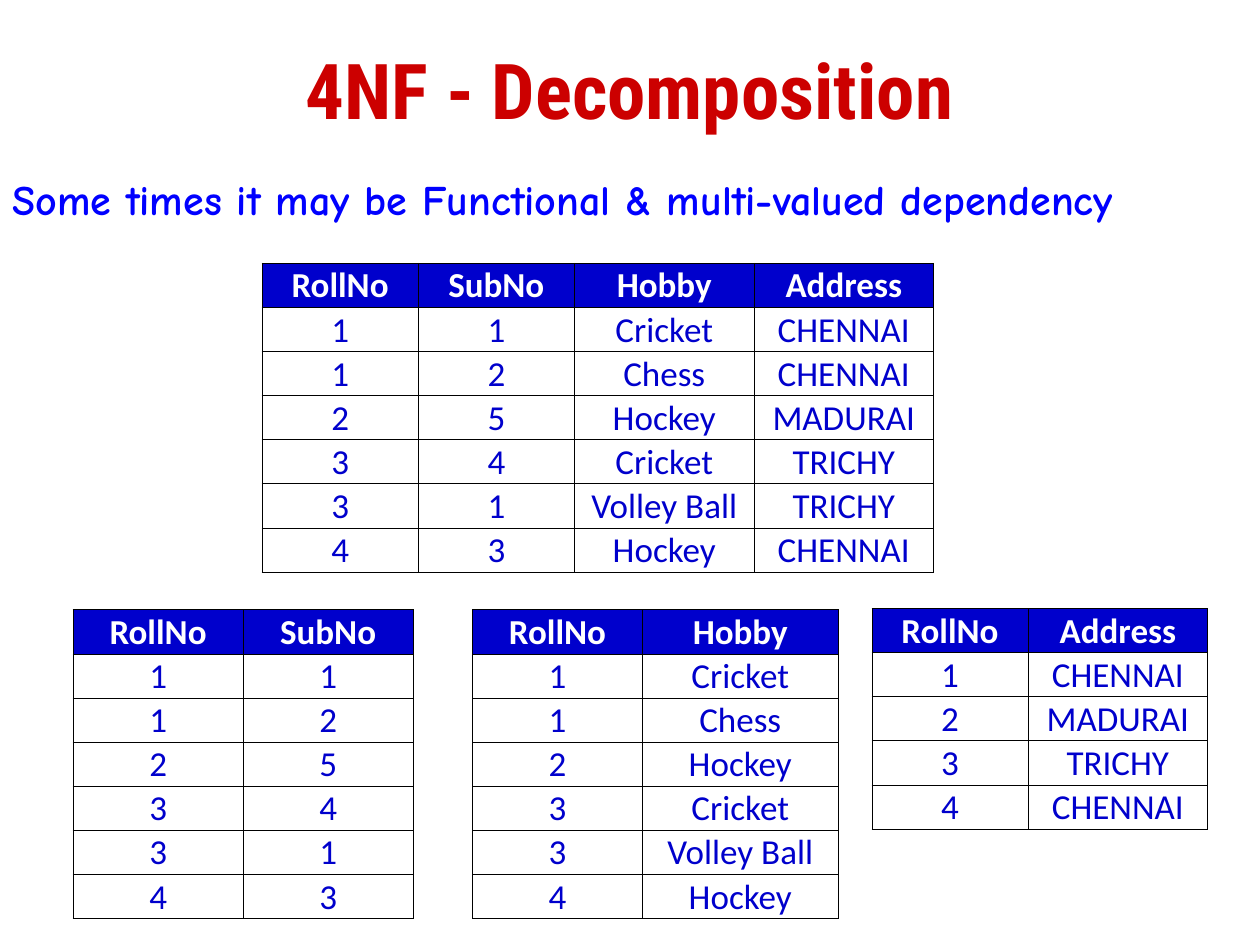
import pptx
import pptx.dml.color
import pptx.enum.text
import pptx.oxml
import pptx.oxml.ns
import pptx.util

RED = pptx.dml.color.RGBColor(0xCC, 0x00, 0x00)
NAVY = pptx.dml.color.RGBColor(0x00, 0x00, 0xCC)
BLUE = pptx.dml.color.RGBColor(0x00, 0x00, 0xFF)
WHITE = pptx.dml.color.RGBColor(0xFF, 0xFF, 0xFF)
BLACK = pptx.dml.color.RGBColor(0x00, 0x00, 0x00)
CENTER = pptx.enum.text.PP_ALIGN.CENTER
LEFT = pptx.enum.text.PP_ALIGN.LEFT
TOP = pptx.enum.text.MSO_ANCHOR.TOP
MIDDLE = pptx.enum.text.MSO_ANCHOR.MIDDLE

deck = pptx.Presentation()
deck.slide_width = pptx.util.Inches(10)
deck.slide_height = pptx.util.Inches(7.5)
page = deck.slides.add_slide(deck.slide_layouts[6])

# Grid of 100 columns by 75 rows
COLUMN = deck.slide_width / 100
ROW = deck.slide_height / 75
TABLE_ROW = round(3.5 * ROW)


def write(frame, text, align, color, font_format):
    para = frame.paragraphs[0]
    para.alignment = align
    span = para.add_run()
    span.text = text
    for name, value in font_format.items():
        setattr(span.font, name, value)
    span.font.color.rgb = color


def add_border(cell):
    properties = cell._tc.get_or_add_tcPr()
    for index, side in enumerate("LRTB"):
        line = pptx.oxml.parse_xml(
            f'<a:ln{side} {pptx.oxml.ns.nsdecls("a")} w="{pptx.util.Pt(0.5)}">'
            f'<a:solidFill><a:srgbClr val="{BLACK}"/></a:solidFill></a:ln{side}>')
        properties.insert(index, line)


# Title and subtitle
headings = [
    ("4NF - Decomposition", (7.5, 0.8, 85, 12.5), MIDDLE, CENTER, RED,
     {"name": "Roboto Condensed", "size": pptx.util.Pt(44), "bold": True}),
    ("Some times it may be Functional & multi-valued dependency",
     (0, 13.3, 100, 5.1), TOP, LEFT, BLUE,
     {"name": "Comic Neue", "size": pptx.util.Pt(24), "bold": True}),
]
for text, (left, top, width, height), anchor, align, color, font_format in headings:
    box = page.shapes.add_textbox(round(left * COLUMN), round(top * ROW),
                                  round(width * COLUMN), round(height * ROW))
    box.text_frame.word_wrap = True
    box.text_frame.vertical_anchor = anchor
    write(box.text_frame, text, align, color, font_format)

# The full relation, and the attributes kept by each table
FIELDS = ["RollNo", "SubNo", "Hobby", "Address"]
RECORDS = [
    ("1", "1", "Cricket", "CHENNAI"),
    ("1", "2", "Chess", "CHENNAI"),
    ("2", "5", "Hockey", "MADURAI"),
    ("3", "4", "Cricket", "TRICHY"),
    ("3", "1", "Volley Ball", "TRICHY"),
    ("4", "3", "Hockey", "CHENNAI"),
]
relations = [
    (20.8, 20.9, FIELDS, (12.4, 12.4, 14.25, 14.25)),
    (5.8, 48.4, ["RollNo", "SubNo"], (13.5, 13.5)),
    (37.5, 48.4, ["RollNo", "Hobby"], (13.5, 15.5)),
    (69.2, 48.3, ["RollNo", "Address"], (12.4, 14.25)),
]
cell_format = {
    "margin_left": pptx.util.Inches(0.01),
    "margin_right": pptx.util.Inches(0.01),
    "margin_top": pptx.util.Inches(0.01),
    "margin_bottom": 0,
    "vertical_anchor": pptx.enum.text.MSO_ANCHOR.BOTTOM,
}

# Each table is a projection of the relation without duplicate rows
for left, top, fields, widths in relations:
    kept = [FIELDS.index(field) for field in fields]
    projection = dict.fromkeys(tuple(record[i] for i in kept) for record in RECORDS)
    lines = [fields, *projection]
    table = page.shapes.add_table(
        len(lines), len(fields), round(left * COLUMN), round(top * ROW),
        round(sum(widths) * COLUMN), TABLE_ROW * len(lines)).table
    table.first_row = table.horz_banding = False
    for column, width in zip(table.columns, widths):
        column.width = round(width * COLUMN)
    for row_number, line in enumerate(lines):
        table.rows[row_number].height = TABLE_ROW
        is_header = row_number == 0
        for column_number, text in enumerate(line):
            cell = table.cell(row_number, column_number)
            for name, value in cell_format.items():
                setattr(cell, name, value)
            if is_header:
                cell.fill.solid()
                cell.fill.fore_color.rgb = NAVY
            else:
                cell.fill.background()
            add_border(cell)
            write(cell.text_frame, text, CENTER, WHITE if is_header else NAVY,
                  {"name": "Calibri", "size": pptx.util.Pt(20), "bold": is_header})

deck.save("out.pptx")
